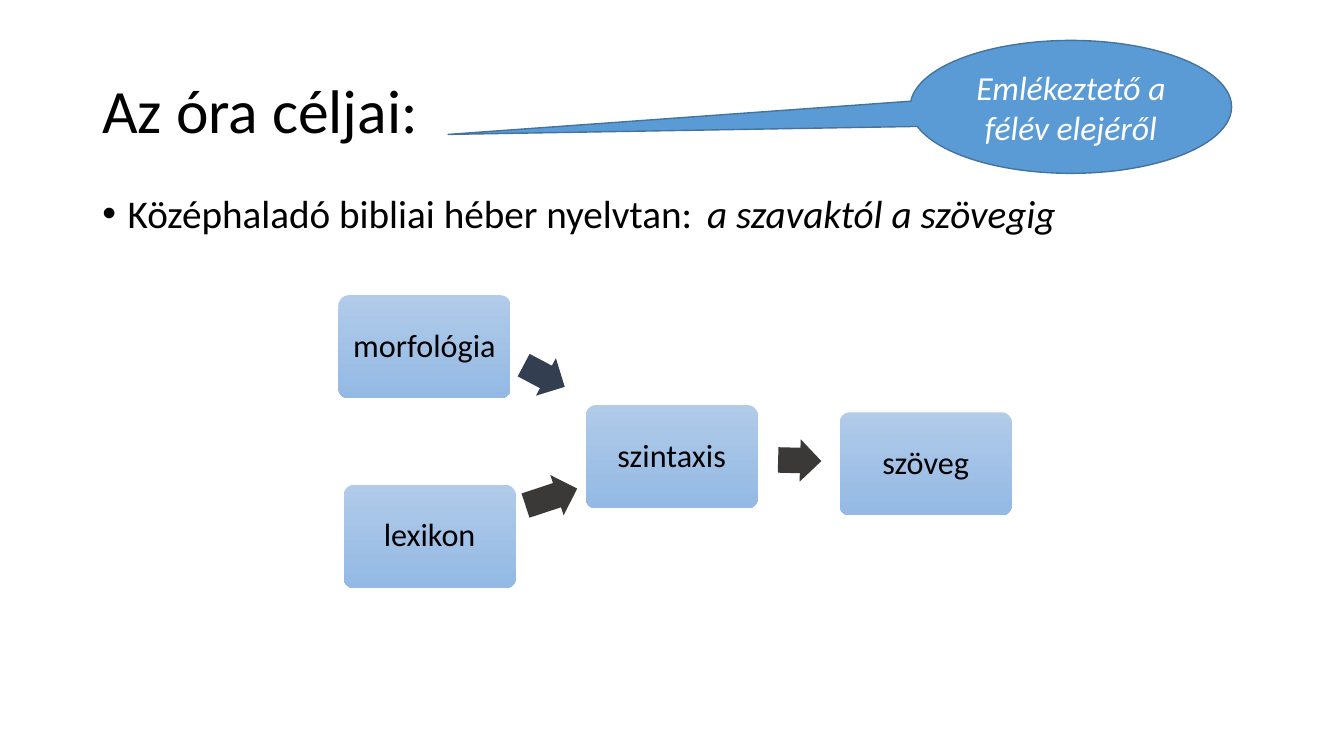
from lxml.etree import SubElement
from pptx import Presentation
from pptx.dml.color import RGBColor
from pptx.enum.shapes import MSO_SHAPE as Preset
from pptx.enum.text import MSO_ANCHOR as Anchor, PP_ALIGN as Align
from pptx.oxml.ns import qn
from pptx.util import Cm, Pt

COLORS = {
    "text": "000000",
    "box_top": "B1CBE9",
    "box_bottom": "93B9E4",
    "arrow_blue": "333F50",
    "arrow_grey": "3B3838",
    "callout": "5B9BD5",
    "callout_line": "43739E",
    "callout_text": "FFFFFF",
}
FONT = "Calibri"
BOX_SIZE = (4.34, 2.6)
ARROW_HEIGHT = 1.07

# word, left, top
BOXES = [
    ("morfológia", 8.53, 7.44),
    ("lexikon", 8.66, 12.22),
    ("szintaxis", 14.76, 10.21),
    ("szöveg", 21.16, 10.39),
]
# left, top, width, rotation, colour
ARROWS = [
    (13.13, 8.94, 1.17, 27.9, "arrow_blue"),
    (13.21, 11.99, 1.37, 341.8, "arrow_grey"),
    (19.61, 11.07, 1.09, 1.5, "arrow_grey"),
]


def rgb(name):
    return RGBColor.from_string(COLORS[name])


def set_all(target, values):
    for attribute, value in values.items():
        setattr(target, attribute, value)


def write(paragraph, text, size, color="text", italic=False):
    run = paragraph.add_run()
    run.text = text
    set_all(run.font, {"name": FONT, "size": Pt(size), "italic": italic})
    run.font.color.rgb = rgb(color)


def add_text_area(slide, top, height, anchor):
    """Add a full-width text box and return its first paragraph."""
    area = slide.shapes.add_textbox(Cm(2.33), Cm(top), Cm(29.21), Cm(height))
    set_all(area.text_frame, {"word_wrap": True, "vertical_anchor": anchor})
    paragraph = area.text_frame.paragraphs[0]
    paragraph.line_spacing = 0.9
    return paragraph


def add_bullet(paragraph):
    properties = paragraph._p.get_or_add_pPr()
    properties.set("marL", str(Cm(0.64)))
    properties.set("indent", str(Cm(-0.64)))
    SubElement(properties, qn("a:buFont"), typeface="Arial")
    SubElement(properties, qn("a:buChar"), char="•")


def add_preset(slide, preset, bounds, adjustments):
    """Add a shape without shadow or outline."""
    shape = slide.shapes.add_shape(preset, *map(Cm, bounds))
    shape.shadow.inherit = False
    shape.line.fill.background()
    for index, value in enumerate(adjustments):
        shape.adjustments[index] = value
    return shape


def add_box(slide, word, left, top):
    box = add_preset(slide, Preset.ROUNDED_RECTANGLE, (left, top, *BOX_SIZE), [0.1])
    box.fill.gradient()
    box.fill.gradient_angle = 270
    for stop, color in zip(box.fill.gradient_stops, ("box_top", "box_bottom")):
        stop.color.rgb = rgb(color)
    margins = {f"margin_{side}": Cm(0.25) for side in ("left", "top", "right", "bottom")}
    set_all(box.text_frame, {**margins, "word_wrap": True, "vertical_anchor": Anchor.MIDDLE})
    paragraph = box.text_frame.paragraphs[0]
    set_all(paragraph, {"alignment": Align.CENTER, "line_spacing": 0.9})
    write(paragraph, word, 23)


def add_arrow(slide, left, top, width, rotation, color):
    bounds = (left, top, width, ARROW_HEIGHT)
    arrow = add_preset(slide, Preset.RIGHT_ARROW, bounds, [0.6, 0.5])
    arrow.rotation = rotation
    arrow.fill.solid()
    arrow.fill.fore_color.rgb = rgb(color)


def add_callout(slide, text):
    bounds = (22.94, 1.02, 8.1, 3.35)
    callout = add_preset(slide, Preset.OVAL_CALLOUT, bounds, [-1.938, 0.207])
    callout.fill.solid()
    callout.fill.fore_color.rgb = rgb("callout")
    callout.line.color.rgb = rgb("callout_line")
    callout.line.width = Pt(1)
    set_all(callout.text_frame, {"word_wrap": True, "vertical_anchor": Anchor.MIDDLE})
    paragraph = callout.text_frame.paragraphs[0]
    paragraph.alignment = Align.CENTER
    write(paragraph, text, 24, "callout_text", italic=True)


def main():
    deck = Presentation()
    set_all(deck, {"slide_width": Cm(33.87), "slide_height": Cm(19.05)})
    slide = deck.slides.add_slide(deck.slide_layouts[6])

    title = add_text_area(slide, 1.02, 3.68, Anchor.MIDDLE)
    write(title, "Az óra céljai:", 44)

    goal = add_text_area(slide, 4.78, 12.09, Anchor.TOP)
    goal.space_before = Pt(10)
    add_bullet(goal)
    write(goal, "Középhaladó bibliai héber nyelvtan: \t", 28)
    write(goal, "a szavaktól a szövegig", 28, italic=True)

    for box in BOXES:
        add_box(slide, *box)
    for arrow in ARROWS:
        add_arrow(slide, *arrow)
    add_callout(slide, "Emlékeztető a félév elejéről")

    deck.save("out.pptx")


if __name__ == "__main__":
    main()
